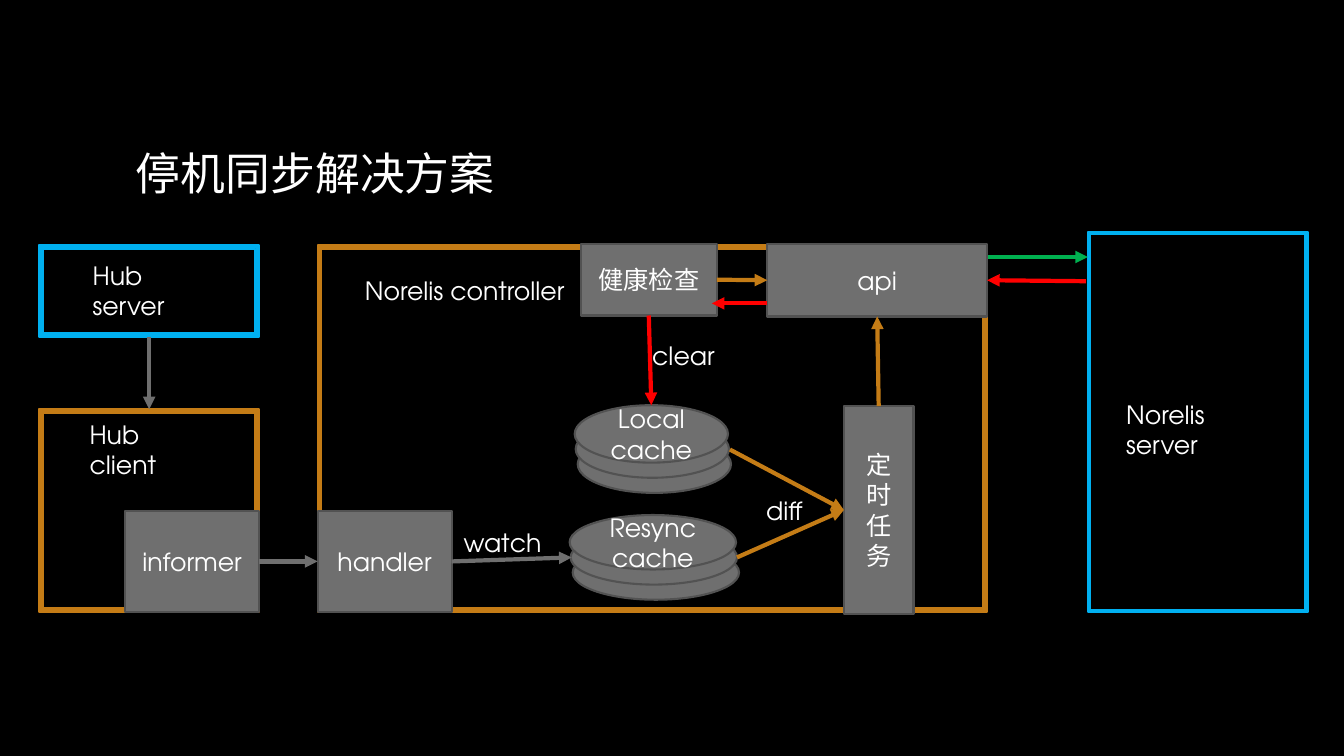
from dataclasses import dataclass
from lxml.etree import SubElement
from pptx import Presentation
from pptx.dml.color import RGBColor
from pptx.enum.shapes import MSO_CONNECTOR, MSO_SHAPE
from pptx.enum.text import MSO_ANCHOR, PP_ALIGN
from pptx.oxml.ns import qn
from pptx.util import Pt

SCALE = 9144
TOP, LEFT, BOTTOM, RIGHT = range(4)


@dataclass(frozen=True)
class Theme:
    back: str = "000000"
    text: str = "FFFFFF"
    gray: str = "6F6F6F"
    edge: str = "525252"
    blue: str = "00B0F0"
    gold: str = "C47C16"
    green: str = "00B050"
    red: str = "FF0000"
    latin: str = "TeX Gyre Adventor"
    asian: str = "Noto Sans CJK SC"
    head: int = 32
    body: int = 18
    rim: float = 1.5
    link: int = 3


THEME = Theme()


def px(*sizes):
    return [size * SCALE for size in sizes]


def paint(shape, fill, edge):
    shape.shadow.inherit = False
    shape.fill.solid()
    shape.fill.fore_color.rgb = RGBColor.from_string(fill)
    shape.line.color.rgb = RGBColor.from_string(edge)
    shape.line.width = Pt(THEME.rim)


def write(shape, text, size=THEME.body, align=PP_ALIGN.CENTER):
    frame = shape.text_frame
    frame.text = text
    frame.vertical_anchor = MSO_ANCHOR.MIDDLE
    part = frame.paragraphs[0]
    part.alignment = align
    font = part.runs[0].font
    font.size = Pt(size)
    font.name = THEME.latin
    font.color.rgb = RGBColor.from_string(THEME.text)
    SubElement(part.runs[0].font._element, qn("a:ea"), typeface=THEME.asian)


def label(slide, box, text, size=THEME.body, wrap=False):
    shape = slide.shapes.add_textbox(*px(*box))
    write(shape, text, size, PP_ALIGN.LEFT)
    shape.text_frame.word_wrap = wrap


def border(slide, box, color, ratio):
    shape = slide.shapes.add_shape(MSO_SHAPE.FRAME, *px(*box))
    shape.adjustments[0] = ratio
    paint(shape, color, color)
    return shape


def block(slide, box, text):
    shape = slide.shapes.add_shape(MSO_SHAPE.RECTANGLE, *px(*box))
    paint(shape, THEME.gray, THEME.edge)
    write(shape, text)
    return shape


def stack(slide, box, text):
    x, y, w, h = box
    group = slide.shapes.add_group_shape()
    for level in (2, 1, 0):
        disk = group.shapes.add_shape(
            MSO_SHAPE.OVAL, *px(x + level * 3 // 2, y + level * 15, w, h))
        paint(disk, THEME.gray, THEME.edge)
    write(disk, text)
    return disk


def link(slide, start, end, color):
    spots = [spot if isinstance(spot[0], int) else (0, 0) for spot in (start, end)]
    line = slide.shapes.add_connector(
        MSO_CONNECTOR.STRAIGHT, *px(*spots[0], *spots[1]))
    if start is not spots[0]:
        line.begin_connect(*start)
    if end is not spots[1]:
        line.end_connect(*end)
    line.line.color.rgb = RGBColor.from_string(color)
    line.line.width = Pt(THEME.link)
    SubElement(line.line._get_or_add_ln(), qn("a:tailEnd"), type="triangle")
    SubElement(line._element.spPr, qn("a:effectLst"))


def cluster(slide, box):
    x, y, w, h = box
    server = border(slide, (x, y, w, 91), THEME.blue, 0.04)
    label(slide, (x + 43, y + 25, 138, 40), "Hub server")
    client = border(slide, (x, y + 163, w, h - 163), THEME.gold, 0.02)
    label(slide, (x + 40, y + 183, 133, 40), "Hub client")
    link(slide, (server, BOTTOM), (client, TOP), THEME.gray)
    return block(slide, (x + w - 133, y + h - 100, 133, 100), "informer")


def control(slide, box):
    x, y, w, h = box
    border(slide, box, THEME.gold, 0.01)
    label(slide, (x + 37, y + 25, 218, 40), "Norelis controller")
    handler = block(slide, (x, y + h - 100, 133, 100), "handler")
    local = stack(slide, (x + 255, y + 159, 152, 57), "Local cache")
    stack(slide, (x + 250, y + 268, 165, 54), "Resync cache")
    api = block(slide, (x + w - 218, y - 1, 218, 72), "api")
    timer = block(slide, (x + 522, y + 160, 69, 206), "定时任务")
    health = block(slide, (x + 261, y - 1, 135, 71), "健康检查")
    link(slide, (handler, RIGHT), (x + 252, y + 310), THEME.gray)
    link(slide, (x + 409, y + 203), (timer, LEFT), THEME.gold)
    link(slide, (x + 416, y + 310), (timer, LEFT), THEME.gold)
    link(slide, (timer, TOP), (api, BOTTOM), THEME.gold)
    link(slide, (health, RIGHT), (api, LEFT), THEME.gold)
    link(slide, (x + 446, y + 58), (x + 391, y + 58), THEME.red)
    link(slide, (health, BOTTOM), (local, TOP), THEME.red)
    label(slide, (x + 135, y + 275, 99, 40), "watch")
    label(slide, (x + 435, y + 243, 58, 40), "diff")
    label(slide, (x + 322, y + 90, 85, 40), "clear")
    return handler, api


def remote(slide, box, api):
    x, y, w, h = box
    border(slide, box, THEME.blue, 0.01)
    label(slide, (x + 28, y + 176, 175, 40), "Norelis server")
    link(slide, (x - 99, y + 25), (x, y + 25), THEME.green)
    link(slide, (x - 2, y + 49), (api, RIGHT), THEME.red)


def main():
    deck = Presentation()
    deck.slide_width, deck.slide_height = px(1333, 750)
    slide = deck.slides.add_slide(deck.slide_layouts[6])
    slide.background.fill.solid()
    slide.background.fill.fore_color.rgb = RGBColor.from_string(THEME.back)
    label(slide, (125, 67, 1083, 208), "停机同步解决方案", THEME.head, True)
    informer = cluster(slide, (39, 243, 218, 364))
    handler, api = control(slide, (315, 243, 664, 364))
    link(slide, (informer, RIGHT), (handler, LEFT), THEME.gray)
    remote(slide, (1079, 230, 218, 377), api)
    deck.save("out.pptx")


if __name__ == "__main__":
    main()
